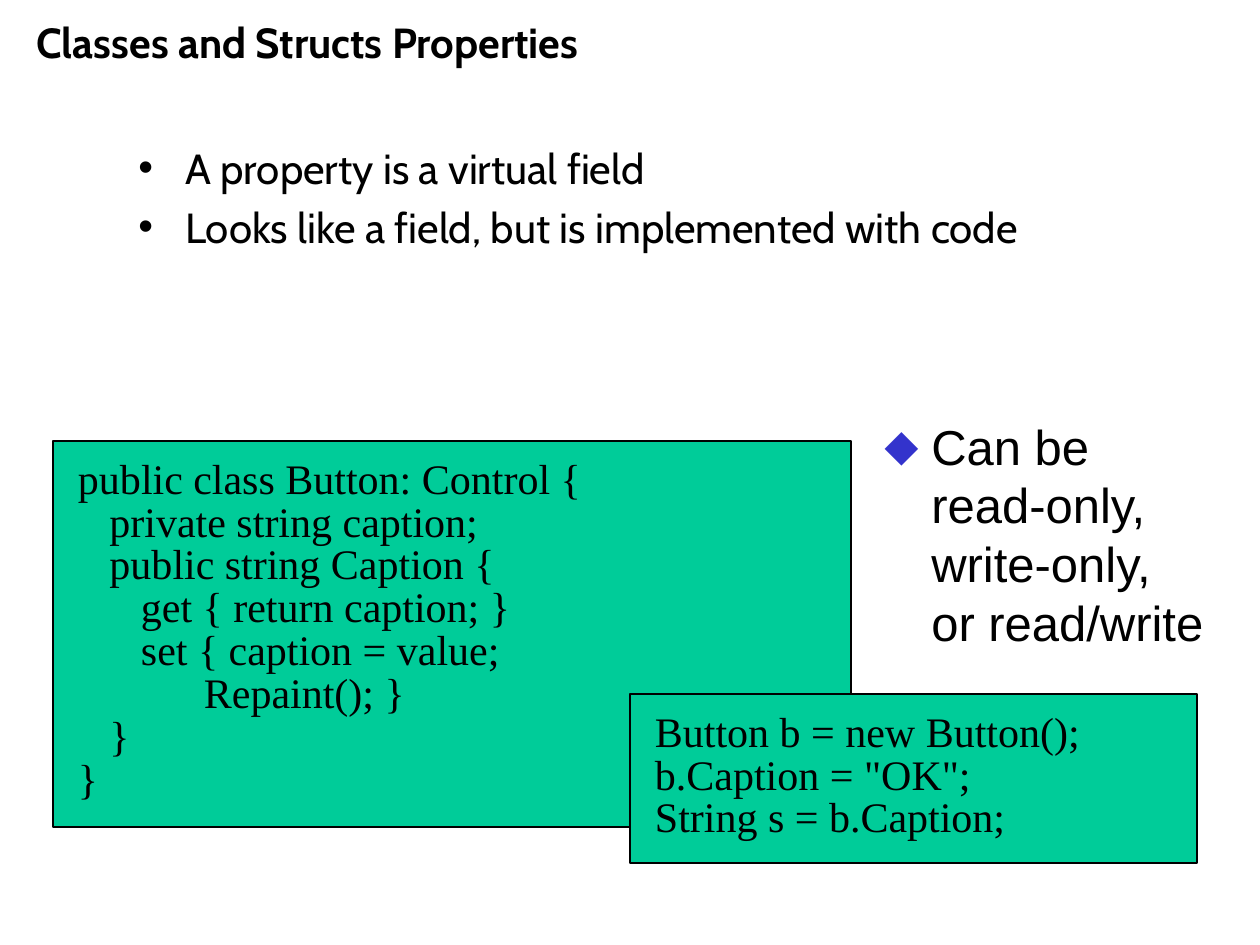
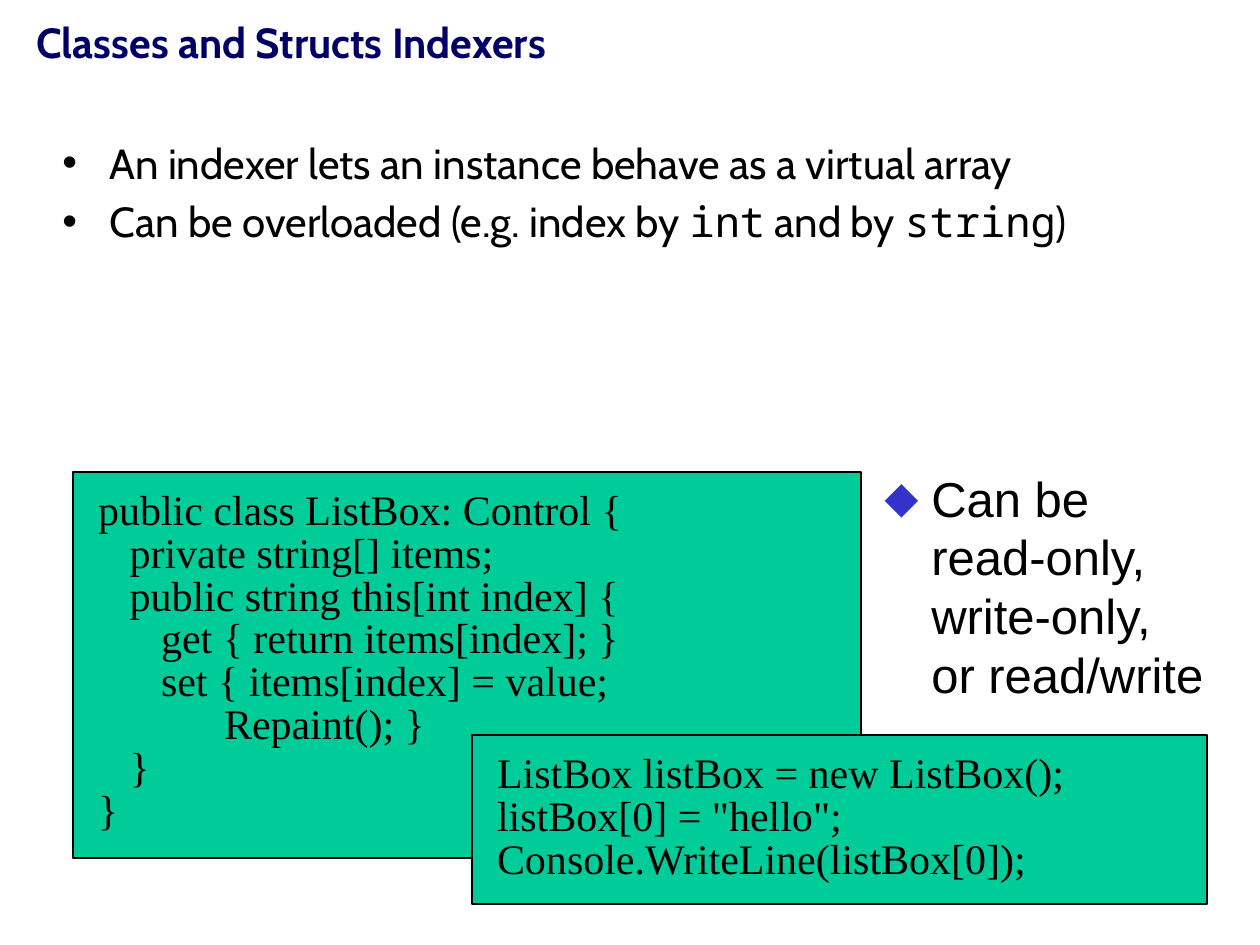
from pptx import Presentation
from pptx.dml.color import RGBColor
from pptx.enum.shapes import MSO_SHAPE
from pptx.enum.text import MSO_ANCHOR, MSO_AUTO_SIZE, PP_ALIGN
from pptx.oxml.ns import qn
from pptx.util import Emu, Pt
from lxml.etree import SubElement

SANS, MONO, SERIF, NOTE = "Cabin", "Noto Sans Mono", "Times New Roman", "Arial"
BLACK, NAVY, GREEN, BLUE = "000000", "000066", "00CC99", "3333CC"

TITLE_BOX = (24, 10, 1223, 126)
HANG = 47      # hanging indent of bulleted text
PAD = (25, 19)  # side and top inset of code panels
NOTE_LINES = ["Can be", "read-only, write-only,", "or read/write"]

# A point is a list of (text, font) runs; a code line is (indent level, text).
SLIDES = [
    {
        "title": ("Classes and Structs Properties", BLACK),
        "body": (126, 136, 1008, 672),
        "points": [
            [("A property is a virtual field", SANS)],
            [("Looks like a field, but is implemented with code", SANS)],
        ],
        "note": (872, 410, 368, 242),
        "panels": [
            ((53, 441, 798, 386), [
                (0, "public class Button: Control {"),
                (1, "private string caption;"),
                (1, "public string Caption {"),
                (2, "get { return caption; }"),
                (2, "set { caption = value;"),
                (4, "Repaint(); }"),
                (1, "}"),
                (0, "}"),
            ]),
            ((630, 694, 567, 169), [
                (0, "Button b = new Button();"),
                (0, 'b.Caption = "OK";'),
                (0, "String s = b.Caption;"),
            ]),
        ],
    },
    {
        "title": ("Classes and Structs Indexers", NAVY),
        "body": (50, 131, 1197, 620),
        "points": [
            [("An indexer lets an instance behave as a virtual array", SANS)],
            [("Can be overloaded (e.g. index by ", SANS), ("int", MONO),
             (" and by ", SANS), ("string", MONO), (")", SANS)],
        ],
        "note": (872, 462, 368, 252),
        "panels": [
            ((73, 472, 788, 386), [
                (0, "public class ListBox: Control {"),
                (1, "private string[] items;"),
                (1, "public string this[int index] {"),
                (2, "get { return items[index]; }"),
                (2, "set { items[index] = value;"),
                (4, "Repaint(); }"),
                (1, "}"),
                (0, "}"),
            ]),
            ((472, 735, 735, 169), [
                (0, "ListBox listBox = new ListBox();"),
                (0, 'listBox[0] = "hello";'),
                (0, "Console.WriteLine(listBox[0]);"),
            ]),
        ],
    },
]


def px(n):
    return Emu(round(n * 914400 / 126))


def rgb(code):
    return RGBColor.from_string(code)


def add_run(para, text, font, size=24, color=BLACK, bold=False):
    run = para.add_run()
    run.text = text
    run.font.name = font
    run.font.size = Pt(size)
    run.font.bold = bold
    run.font.color.rgb = rgb(color)


def add_box(slide, box):
    frame = slide.shapes.add_textbox(*map(px, box)).text_frame
    frame.word_wrap = True
    return frame


def each_para(frame, items):
    """Pair each item with a paragraph, starting from the one already there."""
    for i, item in enumerate(items):
        yield (frame.add_paragraph() if i else frame.paragraphs[0]), item


def add_bullet(para, char, color=BLACK, size=24):
    para.space_before = Pt(size * 0.2)
    props = para._p.get_or_add_pPr()
    props.set("marL", str(px(HANG)))
    props.set("indent", str(-px(HANG)))
    SubElement(SubElement(props, qn("a:buClr")), qn("a:srgbClr"), val=color)
    SubElement(props, qn("a:buFont"), typeface=NOTE)
    SubElement(props, qn("a:buChar"), char=char)


def add_panel(slide, box, lines):
    shape = slide.shapes.add_shape(MSO_SHAPE.RECTANGLE, *map(px, box))
    shape.shadow.inherit = False
    shape.fill.solid()
    shape.fill.fore_color.rgb = rgb(GREEN)
    shape.line.color.rgb = rgb(BLACK)
    shape.line.width = Pt(1)
    frame = shape.text_frame
    frame.word_wrap = True
    frame.auto_size = MSO_AUTO_SIZE.SHAPE_TO_FIT_TEXT
    frame.vertical_anchor = MSO_ANCHOR.TOP
    frame.margin_left = frame.margin_right = px(PAD[0])
    frame.margin_top = frame.margin_bottom = px(PAD[1])
    for para, (level, text) in each_para(frame, lines):
        para.alignment = PP_ALIGN.LEFT
        para.line_spacing = 0.85
        para._p.get_or_add_pPr().set("marL", str(Pt(18 * level)))
        add_run(para, text, SERIF)


def add_note(slide, box):
    para = add_box(slide, box).paragraphs[0]
    add_bullet(para, "⬥", BLUE, 28)
    for i, line in enumerate(NOTE_LINES):
        if i:
            para.add_line_break()
        add_run(para, line, NOTE, 28)


def build(deck, data):
    slide = deck.slides.add_slide(deck.slide_layouts[6])
    for box, lines in data["panels"]:
        add_panel(slide, box, lines)
    text, color = data["title"]
    add_run(add_box(slide, TITLE_BOX).paragraphs[0], text, SANS,
            color=color, bold=True)
    for para, runs in each_para(add_box(slide, data["body"]), data["points"]):
        add_bullet(para, "•")
        for part, font in runs:
            add_run(para, part, font)
    add_note(slide, data["note"])


def main():
    deck = Presentation()
    deck.slide_width, deck.slide_height = px(1260), px(945)
    for data in SLIDES:
        build(deck, data)
    deck.save("out.pptx")


if __name__ == "__main__":
    main()
